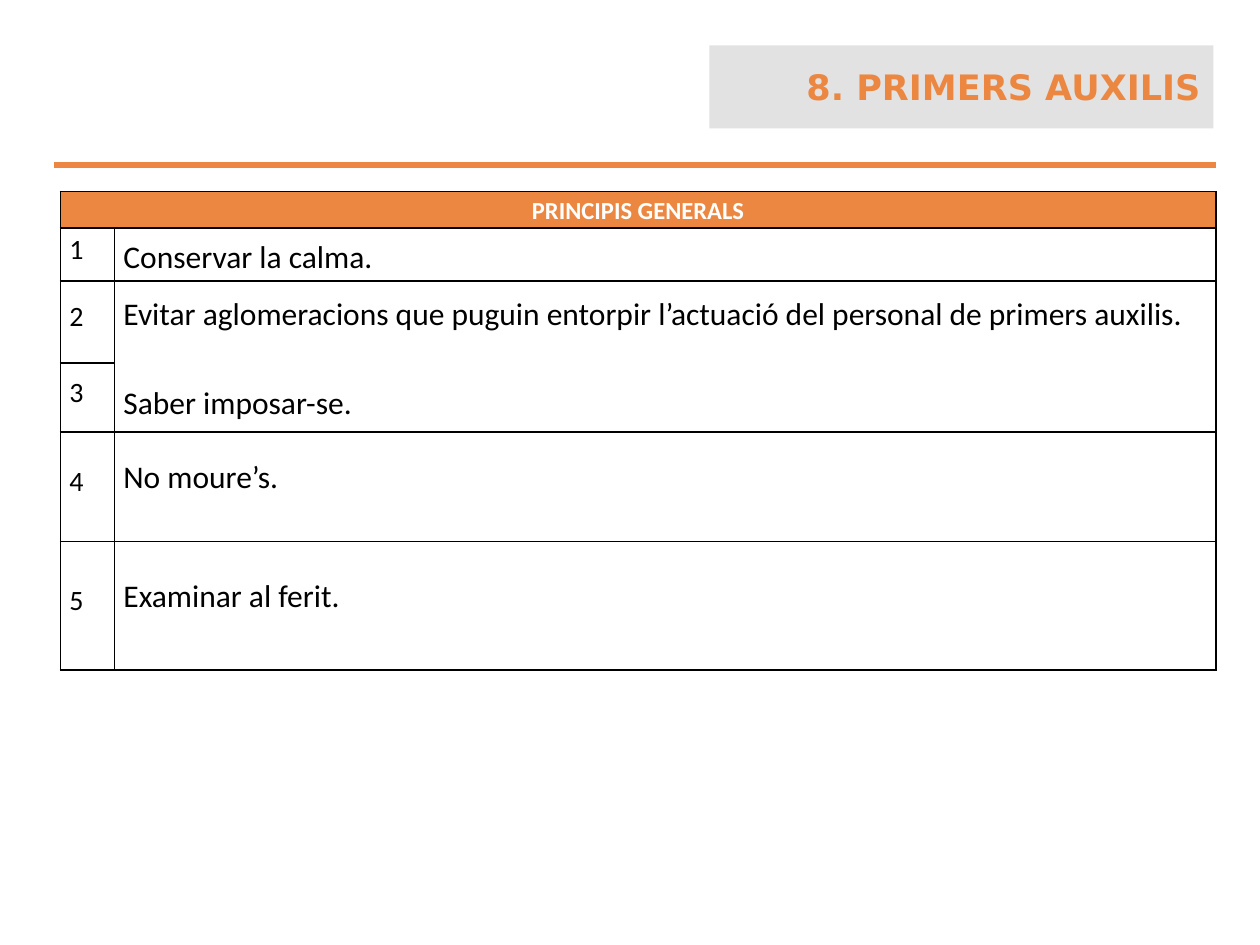
"""Build the first-aid slide with its table of general principles."""
from lxml.etree import SubElement
from pptx import Presentation
from pptx.dml.color import RGBColor
from pptx.enum.shapes import MSO_CONNECTOR
from pptx.enum.text import MSO_ANCHOR, PP_ALIGN
from pptx.oxml.ns import qn
from pptx.util import Inches, Pt

COLORS = {"orange": "EC8741", "gray": "E2E2E2", "black": "000000", "white": "FFFFFF"}
COLS = [0.43, 8.74]
ROWS = [0.29, 0.42, 0.65, 0.55, 0.87, 1.02]
PRINCIPLES = {
    1: ["Conservar la calma."],
    2: ["Evitar aglomeracions que puguin entorpir l’actuació del personal de primers auxilis.",
        "Saber imposar-se."],
    4: ["No moure’s."],
    5: ["Examinar al ferit."],
}


def rgb(name):
    return RGBColor.from_string(COLORS[name])


def format_paragraph(p, size, color, align, spacing):
    p.alignment = align
    p.line_spacing = spacing
    p.font.name = "Calibri"
    p.font.size = Pt(size)
    p.font.color.rgb = rgb(color)


prs = Presentation()
prs.slide_width, prs.slide_height = Inches(10), Inches(7.5)
s = prs.slides.add_slide(prs.slide_layouts[5])

line = s.shapes.add_connector(
    MSO_CONNECTOR.STRAIGHT, Inches(0.43), Inches(1.31), Inches(9.65), Inches(1.31))
line.line.color.rgb = rgb("orange")
line.line.width = Pt(3)
SubElement(line._element.spPr, qn("a:effectLst"))

title = s.shapes.title
title.left, title.top = Inches(5.63), Inches(0.36)
title.width, title.height = Inches(4), Inches(0.66)
title.fill.solid()
title.fill.fore_color.rgb = rgb("gray")
tf = title.text_frame
tf.text = "8. PRIMERS AUXILIS"
tf.vertical_anchor = MSO_ANCHOR.MIDDLE
p = tf.paragraphs[0]
p.alignment = PP_ALIGN.RIGHT
p.font.name = "DejaVu Sans"
p.font.size = Pt(20)
p.font.bold = True
p.font.color.rgb = rgb("orange")

table = s.shapes.add_table(
    len(ROWS), len(COLS), Inches(0.48), Inches(1.52), Inches(sum(COLS)), Inches(sum(ROWS))).table
table.first_row = table.horz_banding = False
for col, width in zip(table.columns, COLS):
    col.width = Inches(width)
for row, height in zip(table.rows, ROWS):
    row.height = Inches(height)

for cell in table.iter_cells():
    cell.margin_left = cell.margin_right = Inches(0.07)
    cell.margin_top = cell.margin_bottom = 0
    cell.vertical_anchor = MSO_ANCHOR.MIDDLE
    for side in ("L", "R", "T", "B"):
        ln = SubElement(cell._tc.get_or_add_tcPr(), qn(f"a:ln{side}"), w=str(Pt(1)))
        SubElement(SubElement(ln, qn("a:solidFill")), qn("a:srgbClr"), val=COLORS["black"])
    cell.fill.background()

header = table.cell(0, 0)
header.merge(table.cell(0, 1))
header.text = "PRINCIPIS GENERALS"
header.vertical_anchor = MSO_ANCHOR.TOP
header.fill.solid()
header.fill.fore_color.rgb = rgb("orange")
p = header.text_frame.paragraphs[0]
format_paragraph(p, 14, "white", PP_ALIGN.CENTER, 1.15)
p.font.bold = True

table.cell(2, 1).merge(table.cell(3, 1))
for number in range(1, len(ROWS)):
    cell = table.cell(number, 0)
    cell.text = str(number)
    format_paragraph(cell.text_frame.paragraphs[0], 16, "black", PP_ALIGN.JUSTIFY, Pt(13.8))

for number, texts in PRINCIPLES.items():
    cell = table.cell(number, 1)
    cell.text = "\n".join(texts)
    for i, p in enumerate(cell.text_frame.paragraphs):
        format_paragraph(p, 18, "black", PP_ALIGN.JUSTIFY, 1.15)
        if i:
            p.space_before = Pt(25.5)
    if number >= 4:
        cell.margin_bottom = Inches(0.19)

prs.save("out.pptx")
